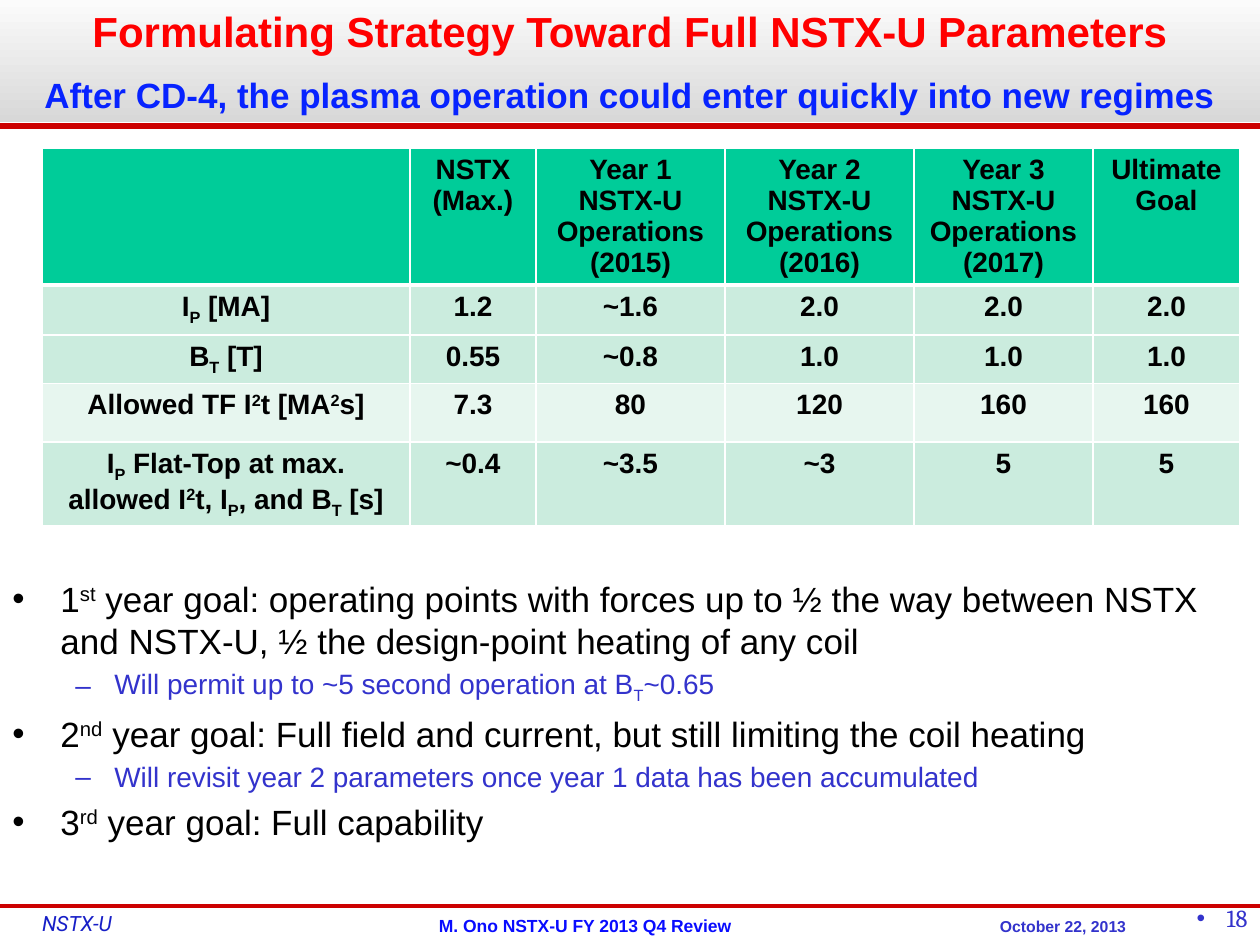
from lxml.etree import SubElement
from pptx import Presentation
from pptx.dml.color import RGBColor
from pptx.enum.shapes import MSO_CONNECTOR, MSO_SHAPE
from pptx.enum.text import MSO_ANCHOR as ANCHOR, MSO_AUTO_SIZE, PP_ALIGN as ALIGN
from pptx.oxml.ns import qn
from pptx.util import Emu, Pt

SCALE = 914400 / 126
WIDTH, HEIGHT = 1260, 945
RED, BLUE, WHITE, BLACK = "CC0000", "3333CC", "FFFFFF", "000000"

TITLE = [("Formulating Strategy Toward Full NSTX-U Parameters", 24, "FF0000"),
         ("After CD-4, the plasma operation could enter quickly into new regimes", 20, "0723FF")]

# In texts, "|" parts the runs; a run led by ^ is raised and one led by _ lowered
COLUMN_WIDTHS = [368, 126, 189, 189, 179, 147]
ROW_HEIGHTS = [135, 50, 48, 59, 83]
ROW_FILLS = ["00CC99", "CBECDE", "CBECDE", "E7F6EF", "CBECDE"]
PARAMETERS = [
    ["", "NSTX\n(Max.)", "Year 1 NSTX-U\nOperations\n(2015)", "Year 2 NSTX-U\nOperations\n(2016)",
     "Year 3 NSTX-U Operations\n(2017)", "Ultimate Goal"],
    ["I|_P| [MA]", "1.2", "~1.6", "2.0", "2.0", "2.0"],
    ["B|_T| [T]", "0.55", "~0.8", "1.0", "1.0", "1.0"],
    ["Allowed TF I|^2|t [MA|^2|s]", "7.3", "80", "120", "160", "160"],
    ["I|_P| Flat-Top at max. allowed I|^2|t, I|_P|, and B|_T| [s]",
     "~0.4", "~3.5", "~3", "5", "5"],
]

GOALS = [
    (0, "1|^st| year goal: operating points with forces up to ½ the way between NSTX "
        "and NSTX-U, ½ the design-point heating of any coil"),
    (1, "Will permit up to ~5 second operation at B|_T|~0.65"),
    (0, "2|^nd| year goal: Full field and current, but still limiting the coil heating"),
    (1, "Will revisit year 2 parameters once year 1 data has been accumulated"),
    (0, "3|^rd| year goal: Full capability"),
]
GOAL_LEVELS = [
    {"bullet": "•", "margin": 48, "hang": 48, "size": 20, "color": BLACK},
    {"bullet": "–", "margin": 102, "hang": 39, "size": 16, "color": BLUE},
]


def px(value):
    return Emu(round(value * SCALE))


def rgb(value):
    return RGBColor.from_string(value)


def place(shape, left, top, width, height):
    box = {"left": left, "top": top, "width": width, "height": height}
    for name, value in box.items():
        setattr(shape, name, px(value))


def write(paragraph, text, size, color, name="Arial", align=ALIGN.LEFT, **styles):
    paragraph.alignment = align
    for part in text.split("|"):
        run = paragraph.add_run()
        run.text = part.lstrip("^_")
        run.font.color.rgb = rgb(color)
        for key, value in {"size": Pt(size), "name": name, **styles}.items():
            setattr(run.font, key, value)
        if part[:1] in ("^", "_"):
            baseline = "30000" if part[0] == "^" else "-25000"
            run.font._element.set("baseline", baseline)


def add_bullet(paragraph, character, margin, hang):
    properties = paragraph._p.get_or_add_pPr()
    properties.set("marL", str(px(margin)))
    properties.set("indent", str(-px(hang)))
    SubElement(properties, qn("a:buFont")).set("typeface", "Arial")
    SubElement(properties, qn("a:buChar")).set("char", character)


def set_frame(frame, inset=None, anchor=ANCHOR.TOP):
    frame.word_wrap = True
    frame.auto_size = MSO_AUTO_SIZE.NONE
    frame.vertical_anchor = anchor
    if inset is not None:
        for side in ("left", "top", "right", "bottom"):
            setattr(frame, "margin_" + side, px(inset))


def add_rule(slide, y, weight):
    rule = slide.shapes.add_connector(MSO_CONNECTOR.STRAIGHT, 0, px(y), px(WIDTH), px(y))
    rule.line.color.rgb = rgb(RED)
    rule.line.width = Pt(weight)
    SubElement(rule._element.spPr, qn("a:effectLst"))


def build_title(slide, left, top, width, height):
    title = slide.shapes.title
    place(title, left, top, width, height)
    title.fill.gradient()
    title.fill.gradient_angle = 270
    for stop, color in zip(title.fill.gradient_stops, ("FBFBFB", "D8D8D8")):
        stop.color.rgb = rgb(color)
    frame = title.text_frame
    set_frame(frame)
    for index, (text, size, color) in enumerate(TITLE):
        paragraph = frame.add_paragraph() if index else frame.paragraphs[0]
        paragraph.line_spacing = Pt(28.2)
        paragraph.space_before = Pt(6 if index else 0)
        write(paragraph, text, size, color, align=ALIGN.CENTER, bold=True)
    add_rule(slide, top + 126, 3)


def set_borders(cell, top, bottom):
    properties = cell._tc.get_or_add_tcPr()
    for side, weight in {"L": 1, "R": 1, "T": top, "B": bottom}.items():
        line = SubElement(properties, qn("a:ln" + side), w=str(Pt(weight)))
        fill = SubElement(line, qn("a:solidFill"))
        SubElement(fill, qn("a:srgbClr"), val=WHITE)


def build_table(slide, left, top):
    table = slide.shapes.add_table(
        len(ROW_HEIGHTS), len(COLUMN_WIDTHS), px(left), px(top),
        px(sum(COLUMN_WIDTHS)), px(sum(ROW_HEIGHTS))).table
    for column, width in zip(table.columns, COLUMN_WIDTHS):
        column.width = px(width)
    for row, height in zip(table.rows, ROW_HEIGHTS):
        row.height = px(height)
    for r, values in enumerate(PARAMETERS):
        for c, text in enumerate(values):
            cell = table.cell(r, c)
            # A heavy border parts the header from the values
            set_borders(cell, top=3 if r == 1 else 1, bottom=3 if r == 0 else 1)
            cell.fill.solid()
            cell.fill.fore_color.rgb = rgb(ROW_FILLS[r])
            frame = cell.text_frame
            for index, line in enumerate(text.split("\n") if text else []):
                paragraph = frame.add_paragraph() if index else frame.paragraphs[0]
                write(paragraph, line, 16, BLACK, align=ALIGN.CENTER, bold=True)


def build_goals(slide, left, top, width, height):
    frame = slide.shapes.add_textbox(*map(px, (left, top, width, height))).text_frame
    set_frame(frame)
    for index, (level, text) in enumerate(GOALS):
        style = GOAL_LEVELS[level]
        paragraph = frame.add_paragraph() if index else frame.paragraphs[0]
        paragraph.level = level
        add_bullet(paragraph, style["bullet"], style["margin"], style["hang"])
        paragraph.space_before = Pt(style["size"] / 5 if index else 0)
        write(paragraph, text, style["size"], style["color"])


def build_footer(slide, left, top, width):
    add_rule(slide, top, 2.25)

    # Project label
    label = slide.shapes.add_shape(
        MSO_SHAPE.RECTANGLE, px(left + 42), px(top + 5), px(110), px(25))
    label.shadow.inherit = False
    label.fill.solid()
    label.fill.fore_color.rgb = rgb(WHITE)
    label.line.fill.background()
    set_frame(label.text_frame, inset=0)
    write(label.text_frame.paragraphs[0], "NSTX-U", 12, "171FC7", name="Roboto", italic=True)

    # Meeting and date
    for text, x, box_width, size, color in (
            ("M. Ono NSTX-U FY 2013 Q4 Review", 194, 782, 10, "090CFF"),
            ("October 22, 2013", 912, 302, 9, BLUE)):
        frame = slide.shapes.add_textbox(
            px(left + x), px(top + 1), px(box_width), px(38)).text_frame
        set_frame(frame, inset=0, anchor=ANCHOR.MIDDLE)
        write(frame.paragraphs[0], text, size, color, align=ALIGN.CENTER, bold=True)

    # Page number
    frame = slide.shapes.add_textbox(
        px(left + width - 262), px(top - 9), px(262), px(63)).text_frame
    set_frame(frame)
    add_bullet(frame.paragraphs[0], "•", 30, 30)
    write(frame.paragraphs[0], "18", 14, BLUE, name="Cambria", align=ALIGN.RIGHT)


def main():
    presentation = Presentation()
    presentation.slide_width, presentation.slide_height = px(WIDTH), px(HEIGHT)
    slide = presentation.slides.add_slide(presentation.slide_layouts[5])
    build_title(slide, 0, 0, WIDTH, 122)
    build_table(slide, 42, 148)
    build_goals(slide, 0, 571, 1229, 284)
    build_footer(slide, 0, 906, WIDTH)
    presentation.save("out.pptx")


if __name__ == "__main__":
    main()
